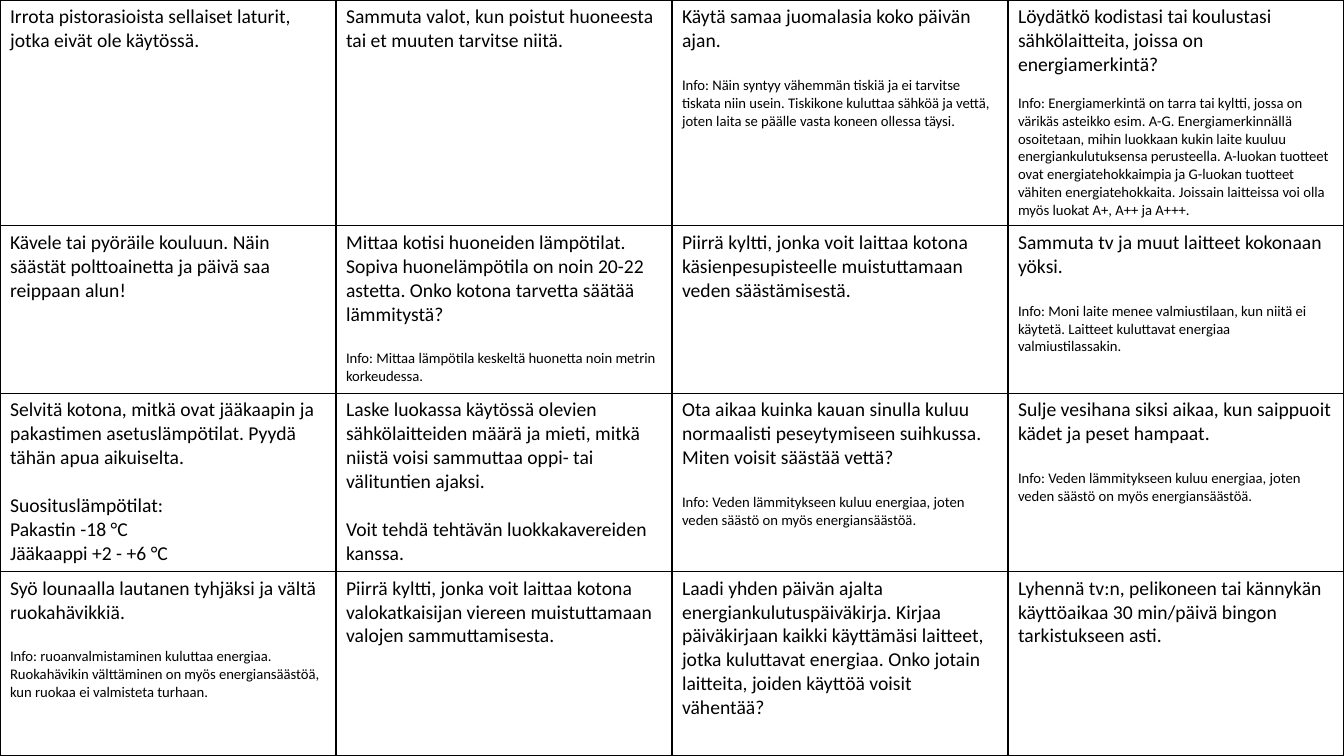
from lxml.etree import SubElement
from pptx import Presentation
from pptx.dml.color import RGBColor
from pptx.oxml.ns import qn
from pptx.util import Cm, Pt

BLACK = RGBColor(0, 0, 0)
WIDTH, HEIGHT = Cm(33.87), Cm(19.05)
ROW_HEIGHTS = [Cm(5.69), Cm(4.22), Cm(4.49), Cm(4.65)]
TASK_SIZE, INFO_SIZE = Pt(14), Pt(10.5)
TASK_GAP, LABEL_GAP = Pt(17), Pt(12.8)
WATER_INFO = "Info: Veden lämmitykseen kuluu energiaa, joten veden säästö on myös energiansäästöä."
LABEL_TASK = "Löydätkö kodistasi tai koulustasi sähkölaitteita, joissa on energiamerkintä?"

BINGO = [
    [
        ["Irrota pistorasioista sellaiset laturit, jotka eivät ole käytössä."],
        ["Sammuta valot, kun poistut huoneesta tai et muuten tarvitse niitä."],
        ["Käytä samaa juomalasia koko päivän ajan.",
         "Info: Näin syntyy vähemmän tiskiä ja ei tarvitse tiskata niin usein. "
         "Tiskikone kuluttaa sähköä ja vettä, joten laita se päälle vasta koneen ollessa täysi."],
        [LABEL_TASK,
         "Info: Energiamerkintä on tarra tai kyltti, jossa on värikäs asteikko esim. A-G. "
         "Energiamerkinnällä osoitetaan, mihin luokkaan kukin laite kuuluu energiankulutuksensa "
         "perusteella. A-luokan tuotteet ovat energiatehokkaimpia ja G-luokan tuotteet vähiten "
         "energiatehokkaita. Joissain laitteissa voi olla myös luokat A+, A++ ja A+++."],
    ],
    [
        ["Kävele tai pyöräile kouluun. Näin säästät polttoainetta ja päivä saa reippaan alun!"],
        ["Mittaa kotisi huoneiden lämpötilat. Sopiva huonelämpötila on noin 20-22 astetta. "
         "Onko kotona tarvetta säätää lämmitystä?",
         "Info: Mittaa lämpötila keskeltä huonetta noin metrin korkeudessa."],
        ["Piirrä kyltti, jonka voit laittaa kotona käsienpesupisteelle muistuttamaan "
         "veden säästämisestä."],
        ["Sammuta tv ja muut laitteet kokonaan yöksi.",
         "Info: Moni laite menee valmiustilaan, kun niitä ei käytetä. "
         "Laitteet kuluttavat energiaa valmiustilassakin."],
    ],
    [
        ["Selvitä kotona, mitkä ovat jääkaapin ja pakastimen asetuslämpötilat. "
         "Pyydä tähän apua aikuiselta.",
         "Suosituslämpötilat:", "Pakastin -18 °C", "Jääkaappi +2 - +6 °C"],
        ["Laske luokassa käytössä olevien sähkölaitteiden määrä ja mieti, mitkä niistä voisi "
         "sammuttaa oppi- tai välituntien ajaksi.",
         "Voit tehdä tehtävän luokkakavereiden kanssa."],
        ["Ota aikaa kuinka kauan sinulla kuluu normaalisti peseytymiseen suihkussa. "
         "Miten voisit säästää vettä?", WATER_INFO],
        ["Sulje vesihana siksi aikaa, kun saippuoit kädet ja peset hampaat.", WATER_INFO],
    ],
    [
        ["Syö lounaalla lautanen tyhjäksi ja vältä ruokahävikkiä.",
         "Info: ruoanvalmistaminen kuluttaa energiaa. Ruokahävikin välttäminen on myös "
         "energiansäästöä, kun ruokaa ei valmisteta turhaan."],
        ["Piirrä kyltti, jonka voit laittaa kotona valokatkaisijan viereen muistuttamaan "
         "valojen sammuttamisesta."],
        ["Laadi yhden päivän ajalta energiankulutuspäiväkirja. Kirjaa päiväkirjaan kaikki "
         "käyttämäsi laitteet, jotka kuluttavat energiaa. Onko jotain laitteita, joiden käyttöä "
         "voisit vähentää?"],
        ["Lyhennä tv:n, pelikoneen tai kännykän käyttöaikaa 30 min/päivä bingon "
         "tarkistukseen asti."],
    ],
]


def set_borders(cell):
    """Draw a thin black line on all four sides of a cell."""
    tc_pr = cell._tc.get_or_add_tcPr()
    for i, side in enumerate(("a:lnL", "a:lnR", "a:lnT", "a:lnB")):
        ln = SubElement(tc_pr, qn(side), w=str(Pt(1)))
        fill = SubElement(ln, qn("a:solidFill"))
        SubElement(fill, qn("a:srgbClr"), val=str(BLACK))
        tc_pr.insert(i, ln)


def fill_cell(cell, texts):
    """Write a task and its follow-up paragraphs into a cell."""
    cell.fill.background()
    set_borders(cell)
    tf = cell.text_frame
    for i, text in enumerate(texts):
        p = tf.paragraphs[0] if i == 0 else tf.add_paragraph()
        p.text = text
        if i == 1:
            p.space_before = LABEL_GAP if texts[0] == LABEL_TASK else TASK_GAP
        p.font.name = "Calibri"
        p.font.size = INFO_SIZE if text.startswith("Info:") else TASK_SIZE
        p.font.color.rgb = BLACK


def add_bingo_table(slide, rows):
    """Add the bingo grid over the whole slide."""
    table = slide.shapes.add_table(len(rows), len(rows[0]), Cm(0), Cm(0), WIDTH, HEIGHT).table
    table.first_row = False
    table.horz_banding = False
    for row, height, cells in zip(table.rows, ROW_HEIGHTS, rows):
        row.height = height
        for cell, texts in zip(row.cells, cells):
            fill_cell(cell, texts)


def main():
    """Build the energy bingo slide."""
    prs = Presentation()
    prs.slide_width, prs.slide_height = WIDTH, HEIGHT
    slide = prs.slides.add_slide(prs.slide_layouts[6])
    add_bingo_table(slide, BINGO)
    prs.save("out.pptx")


if __name__ == "__main__":
    main()
